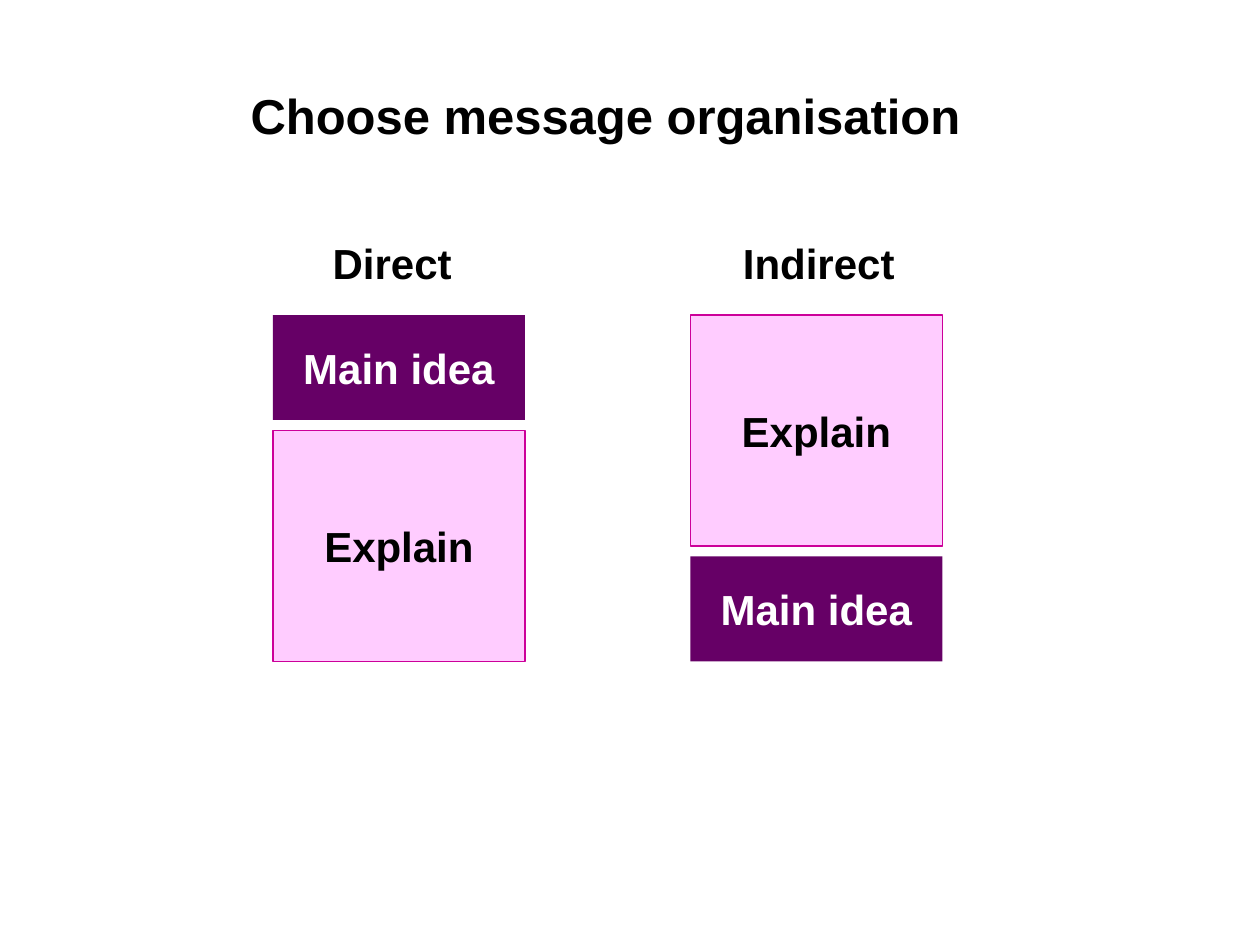
import pptx
import pptx.util
import pptx.dml.color
import pptx.enum.shapes
import pptx.enum.text
from dataclasses import dataclass

Pt = pptx.util.Pt
RGB = pptx.dml.color.RGBColor.from_string
ALIGN = pptx.enum.text.PP_ALIGN
ANCHOR = pptx.enum.text.MSO_ANCHOR


@dataclass(frozen=True)
class Theme:
    font: str = "Arial"
    title_size: float = 28
    body_size: float = 24
    dark_text: str = "000000"
    light_text: str = "FFFFFF"
    main_fill: str = "660066"
    explain_fill: str = "FFCCFF"
    explain_line: str = "CC0099"


THEME = Theme()
HEADING_H = 36
BLOCK_GAP = 6
# Height, fill, line and text colour of each kind of block
BLOCKS = {
    "Main idea": (60, THEME.main_fill, None, THEME.light_text),
    "Explain": (132, THEME.explain_fill, THEME.explain_line, THEME.dark_text),
}


def place(sp, left, top, width, height):
    sp.left, sp.top, sp.width, sp.height = Pt(left), Pt(top), Pt(width), Pt(height)


def set_text(sp, text, size, color, align=ALIGN.CENTER, anchor=ANCHOR.MIDDLE):
    tf = sp.text_frame
    tf.word_wrap = False
    tf.vertical_anchor = anchor
    p = tf.paragraphs[0]
    p.text = text
    p.alignment = align
    p.font.name = THEME.font
    p.font.size = Pt(size)
    p.font.bold = True
    p.font.color.rgb = RGB(color)


def add_title(slide, text, left, top, width, height):
    sp = slide.shapes.title
    place(sp, left, top, width, height)
    set_text(sp, text, THEME.title_size, THEME.dark_text, ALIGN.LEFT)


def add_block(slide, text, left, top, width):
    """Draw one labelled block and return its height."""
    height, fill, line, color = BLOCKS[text]
    sp = slide.shapes.add_shape(pptx.enum.shapes.MSO_SHAPE.RECTANGLE,
                                Pt(left), Pt(top), Pt(width), Pt(height))
    sp.shadow.inherit = False
    sp.fill.solid()
    sp.fill.fore_color.rgb = RGB(fill)
    if line:
        sp.line.color.rgb = RGB(line)
        sp.line.width = Pt(0.75)
    else:
        sp.line.fill.background()
    set_text(sp, text, THEME.body_size, color)
    return height


def add_column(slide, heading, order, left, top, width, head_dx, head_w):
    # Heading
    sp = slide.shapes.add_textbox(Pt(left + head_dx), Pt(top), Pt(head_w), Pt(HEADING_H))
    set_text(sp, heading, THEME.body_size, THEME.dark_text, ALIGN.LEFT, ANCHOR.TOP)
    # Stacked blocks
    y = top + HEADING_H + 12
    for text in order:
        y += add_block(slide, text, left, y, width) + BLOCK_GAP


def main():
    prs = pptx.Presentation()
    prs.slide_width, prs.slide_height = Pt(720), Pt(540)
    slide = prs.slides.add_slide(prs.slide_layouts[5])

    add_title(slide, "Choose message organisation", 136, 45, 425.5, 41)
    order = ["Main idea", "Explain"]
    add_column(slide, "Direct", order, 156, 132, 144, 27, 83.5)
    add_column(slide, "Indirect", order[::-1], 394.5, 132, 144, 23, 102)

    prs.save("out.pptx")


if __name__ == "__main__":
    main()
